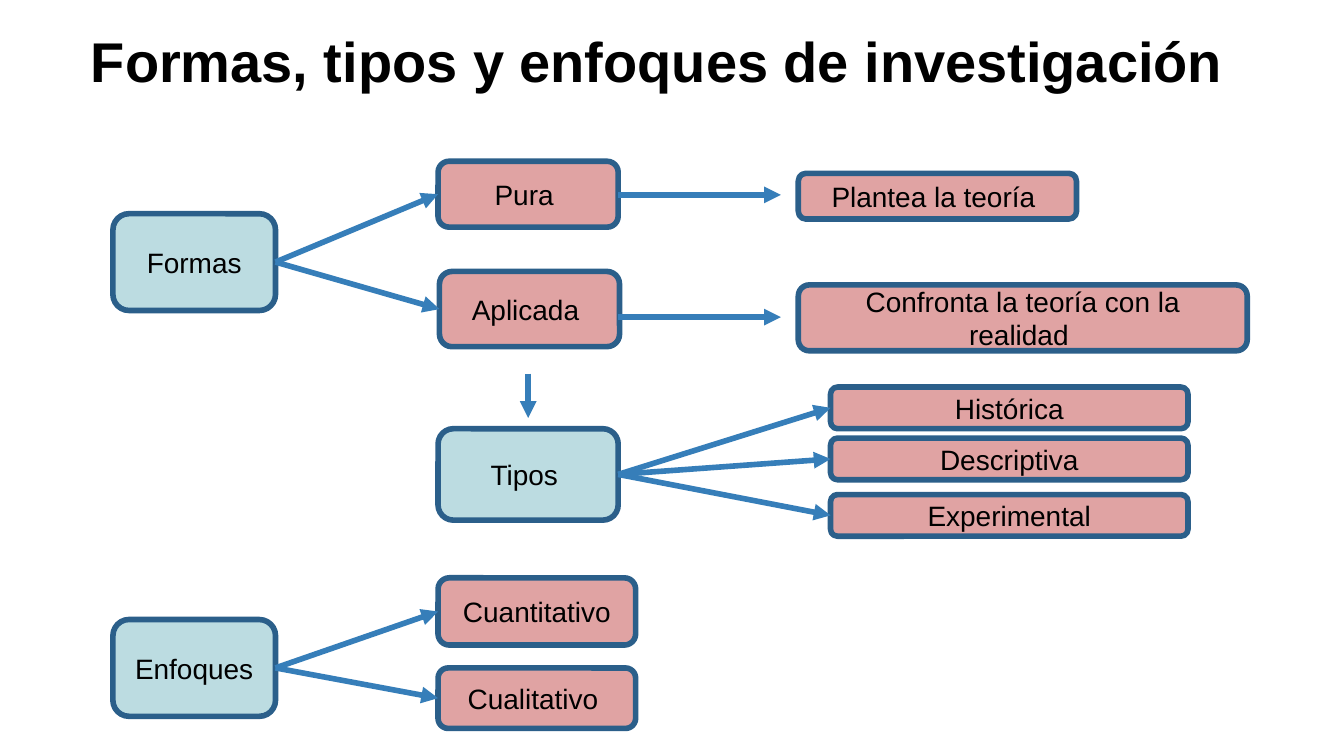
from dataclasses import dataclass

from lxml import etree
from pptx import Presentation
from pptx.dml.color import RGBColor
from pptx.enum.shapes import MSO_CONNECTOR, MSO_SHAPE
from pptx.enum.text import MSO_ANCHOR, MSO_AUTO_SIZE, PP_ALIGN
from pptx.oxml.ns import qn
from pptx.util import Inches, Pt

ROUNDED = MSO_SHAPE.ROUNDED_RECTANGLE
STRAIGHT = MSO_CONNECTOR.STRAIGHT
CENTER = PP_ALIGN.CENTER
MIDDLE = MSO_ANCHOR.MIDDLE
NO_FIT = MSO_AUTO_SIZE.NONE
LEFT_SITE, RIGHT_SITE = 1, 3


@dataclass(frozen=True)
class Theme:
    font: str = "Arial"
    text: str = "000000"
    category: str = "BCDCE1"
    detail: str = "E0A3A3"
    border: str = "2B5F8A"
    arrow: str = "367EB9"
    title_size: float = 30
    box_size: float = 15
    line_width: float = 3


THEME = Theme()


def rgb(value):
    return RGBColor.from_string(value)


def write_text(tf, text, size, bold=False, wrap=True):
    tf.word_wrap = wrap
    tf.auto_size = NO_FIT
    tf.vertical_anchor = MIDDLE
    p = tf.paragraphs[0]
    p.alignment = CENTER
    r = p.add_run()
    r.text = text
    r.font.name = THEME.font
    r.font.size = Pt(size)
    r.font.bold = bold
    r.font.color.rgb = rgb(THEME.text)


def add_title(slide, text):
    sp = slide.shapes.title
    sp.left, sp.top = Inches(0.56), Inches(0.16)
    sp.width, sp.height = Inches(8.66), Inches(0.58)
    tf = sp.text_frame
    tf.margin_left = tf.margin_right = Inches(0.07)
    tf.margin_top = tf.margin_bottom = Inches(0.04)
    write_text(tf, text, THEME.title_size, bold=True, wrap=False)


def add_box(slide, text, left, top, width, height, fill=THEME.detail):
    sp = slide.shapes.add_shape(
        ROUNDED, Inches(left), Inches(top), Inches(width), Inches(height))
    sp.shadow.inherit = False
    sp.fill.solid()
    sp.fill.fore_color.rgb = rgb(fill)
    sp.line.color.rgb = rgb(THEME.border)
    sp.line.width = Pt(THEME.line_width)
    write_text(sp.text_frame, text, THEME.box_size)
    return sp


def add_arrow(slide, x1=0, y1=0, x2=0, y2=0):
    cxn = slide.shapes.add_connector(
        STRAIGHT, Inches(x1), Inches(y1), Inches(x2), Inches(y2))
    cxn.line.color.rgb = rgb(THEME.arrow)
    cxn.line.width = Pt(THEME.line_width)
    ln = cxn.line.fill._xPr
    etree.SubElement(ln, qn("a:tailEnd"), type="triangle")
    etree.SubElement(cxn._element.spPr, qn("a:effectLst"))
    return cxn


def add_branches(slide, parent, children):
    """Join the right side of the parent to the left side of each child."""
    for child in children:
        cxn = add_arrow(slide)
        cxn.begin_connect(parent, RIGHT_SITE)
        cxn.end_connect(child, LEFT_SITE)


def add_forms(slide):
    formas = add_box(slide, "Formas", 0.84, 1.59, 1.21, 0.72, THEME.category)
    pura = add_box(slide, "Pura ", 3.26, 1.2, 1.34, 0.49)
    aplicada = add_box(slide, "Aplicada ", 3.27, 2.02, 1.34, 0.56)
    add_branches(slide, formas, [pura, aplicada])
    add_box(slide, "Plantea la teoría ", 5.94, 1.29, 2.07, 0.34)
    add_box(slide, "Confronta la teoría con la realidad ", 5.94, 2.12, 3.34, 0.49)
    for y in (1.45, 2.36):
        add_arrow(slide, 4.6, y, 5.81, y)


def add_types(slide):
    add_arrow(slide, 3.93, 2.78, 3.93, 3.11)
    tipos = add_box(slide, "Tipos ", 3.26, 3.19, 1.34, 0.68, THEME.category)
    kinds = [("Histórica", 2.88), ("Descriptiva", 3.26), ("Experimental", 3.68)]
    add_branches(slide, tipos, [
        add_box(slide, text, 6.18, top, 2.66, 0.31) for text, top in kinds])


def add_approaches(slide):
    enfoques = add_box(slide, "Enfoques", 0.84, 4.61, 1.21, 0.72, THEME.category)
    add_branches(slide, enfoques, [
        add_box(slide, "Cuantitativo", 3.26, 4.3, 1.47, 0.5),
        add_box(slide, "Cualitativo ", 3.26, 4.97, 1.47, 0.45)])


def main():
    prs = Presentation()
    prs.slide_width = Inches(10)
    prs.slide_height = Inches(10 * 9 / 16)
    slide = prs.slides.add_slide(prs.slide_layouts.get_by_name("Title Only"))
    add_title(slide, "Formas, tipos y enfoques de investigación")
    add_forms(slide)
    add_types(slide)
    add_approaches(slide)
    prs.save("out.pptx")


if __name__ == "__main__":
    main()
